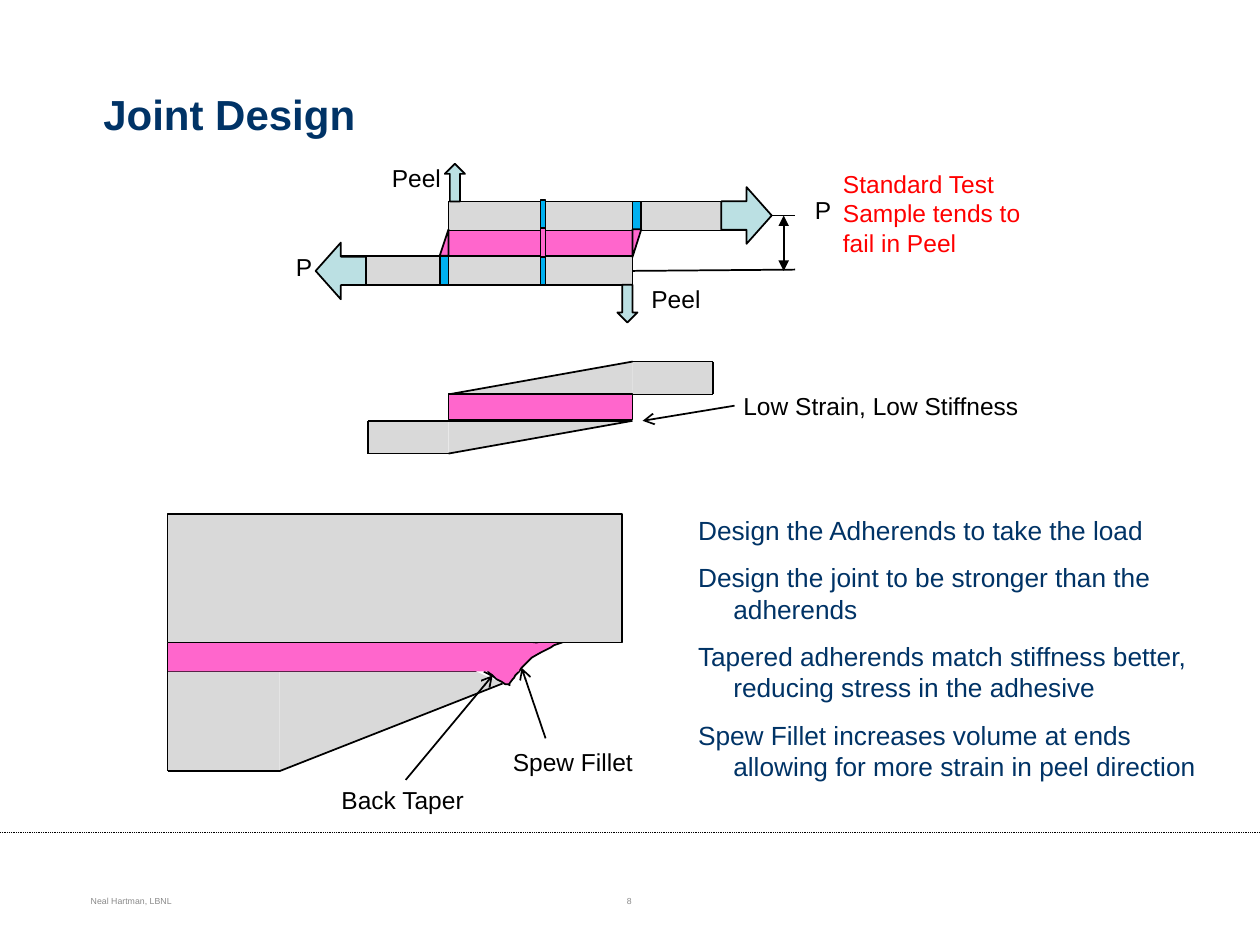
from lxml import etree
from pptx import Presentation
from pptx import util as u
from pptx.dml import color
from pptx.enum import dml, shapes, text
from pptx.oxml import ns

COLORS = {
    "navy": "003366", "black": "000000", "red": "FF0000", "muted": "898989",
    "adherend": "D9D9D9", "adhesive": "FF66CC", "strain": "00B0F0",
    "load": "BBE0E3", "paper": "FFFFFF",
}
KIND = shapes.MSO_SHAPE
SPEW = [
    (2.71, 1.35), (2.74, 1.31), (2.75, 1.3), (2.76, 1.28), (2.79, 1.25),
    (2.81, 1.22), (2.86, 1.17), (2.89, 1.14), (2.96, 1.1), (3, 1.08),
    (3.04, 1.06), (3.07, 1.04), (3.13, 1.02), (3.18, 1), (3, 1),
    (2.93, 1.02), (2.84, 1.01), (2.52, 1.01), (2.52, 1.1), (2.53, 1.16),
    (2.54, 1.24), (2.55, 1.26), (2.58, 1.28), (2.61, 1.31), (2.65, 1.33),
    (2.68, 1.35),
]
ADVICE = [
    "Design the Adherends to take the load",
    "Design the joint to be stronger than the adherends",
    "Tapered adherends match stiffness better, reducing stress in the adhesive",
    "Spew Fillet increases volume at ends allowing for more strain in peel direction",
]


def rgb(name):
    return color.RGBColor.from_string(COLORS[name])


def apply(target, values):
    for name, value in values.items():
        setattr(target, name, value)


def within(box, at):
    return (box[0] + at[0], box[1] + at[1], *at[2:])


def paint(sp, fill, outline=True):
    sp.shadow.inherit = False
    sp.fill.solid()
    sp.fill.fore_color.rgb = rgb(fill)
    if outline:
        sp.line.color.rgb = rgb("black")
        sp.line.width = u.Pt(1)
    else:
        sp.line.fill.background()


def block(s, box, at, fill, kind=KIND.RECTANGLE, outline=True, rot=0, flip=False):
    sp = s.shapes.add_shape(kind, *map(u.Inches, within(box, at)))
    paint(sp, fill, outline)
    sp.rotation = rot
    if flip:
        sp._element.spPr.xfrm.set("flipH", "1")


def line(s, box, start, end, width=1, dash=None, **ends):
    points = within(box, start) + within(box, end)
    cx = s.shapes.add_connector(shapes.MSO_CONNECTOR.STRAIGHT, *map(u.Inches, points))
    cx.line.color.rgb = rgb("black")
    cx.line.width = u.Pt(width)
    if dash:
        cx.line.dash_style = dash
    ln = cx.line._get_or_add_ln()
    for end_name in ("headEnd", "tailEnd"):
        if end_name in ends:
            etree.SubElement(ln, ns.qn(f"a:{end_name}"), type=ends[end_name])
    etree.SubElement(cx._element.spPr, ns.qn("a:effectLst"))


def write(s, box, lines, size, hue, bold=False, wrap=True, fit=False, inset=(0.07, 0.04),
          anchor=text.MSO_ANCHOR.TOP, align=text.PP_ALIGN.LEFT, gap=0, hanging=0):
    tf = s.shapes.add_textbox(*map(u.Inches, box)).text_frame
    side, edge = map(u.Inches, inset)
    sizing = text.MSO_AUTO_SIZE
    apply(tf, {
        "word_wrap": wrap, "vertical_anchor": anchor,
        "auto_size": sizing.SHAPE_TO_FIT_TEXT if fit else sizing.NONE,
        "margin_left": side, "margin_right": side,
        "margin_top": edge, "margin_bottom": edge,
    })
    for i, words in enumerate(lines):
        p = tf.add_paragraph() if i else tf.paragraphs[0]
        apply(p, {"alignment": align, "space_before": u.Pt(gap if i else 0)})
        if hanging:
            indent = u.Inches(hanging)
            p._p.get_or_add_pPr().set("marL", str(indent))
            p._p.get_or_add_pPr().set("indent", str(-indent))
        r = p.add_run()
        r.text = words
        apply(r.font, {"name": "Arial", "size": u.Pt(size), "bold": bold})
        r.font.color.rgb = rgb(hue)


def label(s, box, at, words, hue="black", wrap=False, inset=(0.07, 0.04)):
    write(s, within(box, at), [words], 14, hue, wrap=wrap, fit=True, inset=inset)


def tapered_adherend(s, box, flat, turned=False):
    w, h = box[2:]
    block(s, box, (0 if turned else flat, 0, w - flat, h), "adherend",
          KIND.RIGHT_TRIANGLE, outline=False, rot=0 if turned else 180, flip=True)
    block(s, box, (w - flat if turned else 0, 0, flat, h), "adherend", outline=False)
    corners = [(0, 0), (w, 0), (flat, h), (0, h)]
    if turned:
        corners = [(w - x, h - y) for x, y in corners]
    for start, end in zip(corners, corners[1:] + corners[:1]):
        line(s, box, start, end)


def lap_joint(s, box):
    for at, fill in [
        ((0.41, 0.78, 2.36, 0.23), "adherend"),
        ((1.31, 0.58, 1.46, 0.2), "adhesive"),
        ((1.31, 0.35, 2.36, 0.23), "adherend"),
        ((2.77, 0.35, 0.07, 0.23), "strain"),
        ((1.24, 0.78, 0.07, 0.23), "strain"),
        ((2.04, 0.34, 0.04, 0.23), "strain"),
        ((2.04, 0.78, 0.04, 0.23), "strain"),
        ((2.04, 0.56, 0.04, 0.23), "adhesive"),
    ]:
        block(s, box, at, fill)
    for at, rot in [((1.24, 0.57, 0.07, 0.21), 0), ((2.77, 0.57, 0.07, 0.22), 180)]:
        block(s, box, at, "adhesive", KIND.RIGHT_TRIANGLE, rot=rot, flip=True)
    line(s, box, (2.77, 0.9), (4.06, 0.89))
    line(s, box, (3.88, 0.46), (4.06, 0.46))
    line(s, box, (3.97, 0.46), (3.97, 0.9), headEnd="triangle", tailEnd="triangle")
    for at, rot in [
        ((0.23, 0.7, 0.45, 0.4), 90), ((3.45, 0.26, 0.45, 0.4), 270),
        ((2.65, 1.01, 0.16, 0.3), 0), ((1.28, 0.05, 0.16, 0.3), 180),
    ]:
        block(s, box, at, "load", KIND.DOWN_ARROW, rot=rot)
    for x, y in [(0, 0.7), (4.12, 0.25)]:
        label(s, box, (x, y, 0.33, 0.34), "P", inset=(0.1, 0.05))
    for x, y in [(2.85, 0.96), (0.79, 0)]:
        label(s, box, (x, y, 0.54, 0.31), "Peel")
    label(s, box, (4.37, 0.05, 1.79, 0.78),
          "Standard Test Sample tends to fail in Peel", "red", wrap=True)


def tapered_joint(s, box):
    tapered_adherend(s, within(box, (0, 0.47, 2.1, 0.26)), 0.64)
    tapered_adherend(s, within(box, (0.64, 0, 2.1, 0.26)), 0.64, turned=True)
    block(s, box, (0.64, 0.26, 1.46, 0.2), "adhesive")
    line(s, box, (2.91, 0.35), (2.18, 0.47), tailEnd="arrow")
    label(s, box, (2.91, 0.19, 2.36, 0.31), "Low Strain, Low Stiffness")


def fillet_detail(s, box):
    tapered_adherend(s, within(box, (0, 1.25, 2.9, 0.79)), 0.89)
    block(s, box, (2.51, 0.95, 0.55, 0.43), "paper", outline=False, rot=24.3)
    line(s, box, (2.51, 1.25), (2.72, 1.36))
    outline = [tuple(map(u.Inches, within(box, point))) for point in SPEW]
    fb = s.shapes.build_freeform(*outline[0])
    fb.add_line_segments(outline[1:], close=True)
    paint(fb.convert_to_shape(), "adhesive")
    block(s, box, (0, 0.99, 2.79, 0.26), "adhesive", outline=False)
    block(s, box, (0, 0, 3.61, 1.02), "adherend")
    line(s, box, (0, 1.02), (0, 1.25))
    label(s, box, (2.67, 1.81, 1.12, 0.31), "Spew Fillet")
    line(s, box, (3, 1.78), (2.81, 1.22), tailEnd="arrow")
    label(s, box, (1.31, 2.11, 1.16, 0.31), "Back Taper")
    line(s, box, (1.89, 2.11), (2.58, 1.28), tailEnd="arrow")


def footer(s, box):
    middle = text.MSO_ANCHOR.MIDDLE
    line(s, box, (0, 0), (box[2], 0), width=0.5, dash=dml.MSO_LINE.ROUND_DOT)
    write(s, within(box, (0.65, 0.34, 3.17, 0.4)), ["Neal Hartman, LBNL"], 5, "muted",
          anchor=middle)
    write(s, within(box, (3.83, 0.34, 2.33, 0.4)), ["8"], 5, "muted",
          anchor=middle, align=text.PP_ALIGN.CENTER)


def main():
    prs = Presentation()
    apply(prs, {"slide_width": u.Inches(10), "slide_height": u.Inches(7.5)})
    s = prs.slides.add_slide(prs.slide_layouts[6])
    footer(s, (0, 6.61, 10, 0.89))
    write(s, (0.75, 0.28, 8.51, 1.25), ["Joint Design"], 24, "navy", bold=True,
          anchor=text.MSO_ANCHOR.MIDDLE)
    write(s, (5.47, 4.04, 4.11, 2.54), ADVICE, 15, "navy", gap=9, hanging=0.28)
    lap_joint(s, (2.25, 1.25, 6.16, 1.31))
    tapered_joint(s, (2.92, 2.87, 5.27, 0.73))
    fillet_detail(s, (1.33, 4.08, 3.79, 2.42))
    prs.save("out.pptx")


if __name__ == "__main__":
    main()
